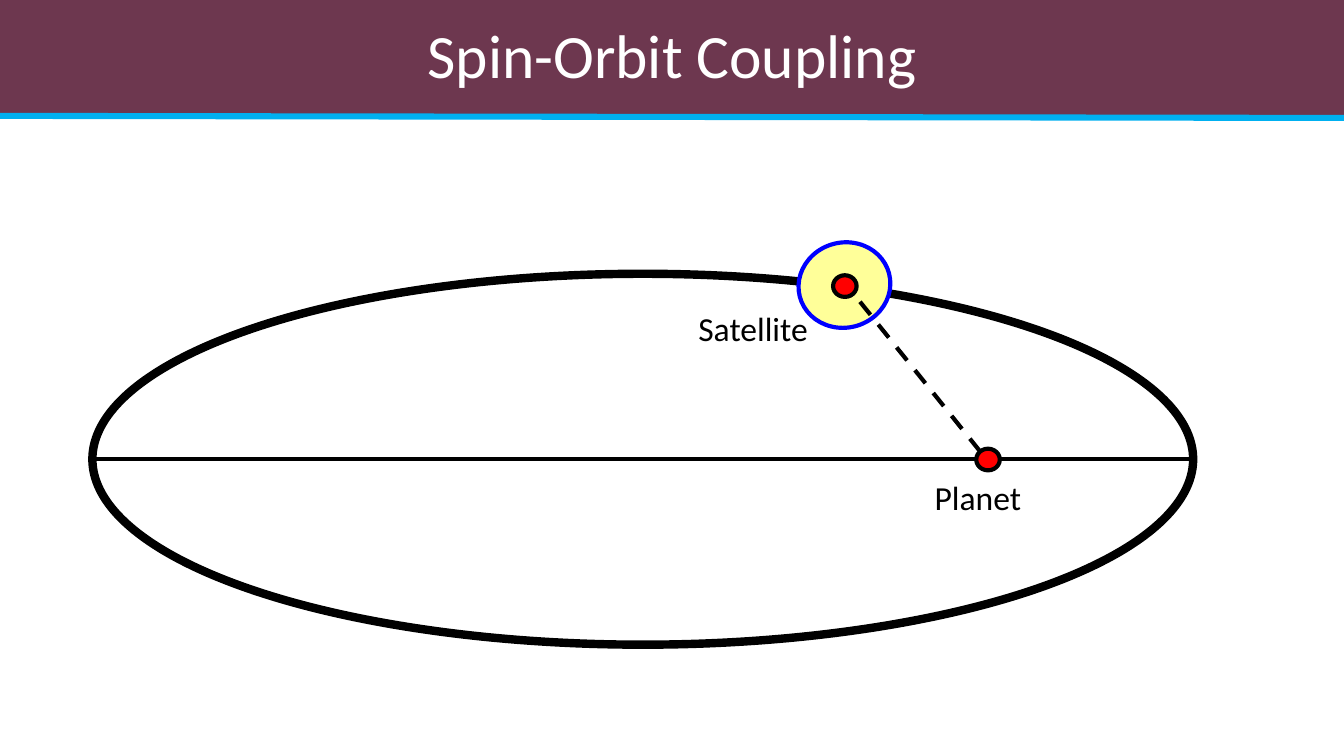
from typing import NamedTuple, Optional
from lxml.etree import SubElement as Sub
from pptx import Presentation
from pptx.dml.color import RGBColor as Rgb
from pptx.enum.dml import MSO_LINE as Dash
from pptx.enum.shapes import MSO_CONNECTOR as Conn, MSO_SHAPE as Kind
from pptx.enum.text import MSO_ANCHOR as Anchor, MSO_AUTO_SIZE as Auto, PP_ALIGN as Align
from pptx.oxml.ns import qn
from pptx.util import Pt

HUES = {
    "band": "460220",
    "rule": "00B0F0",
    "ink": "000000",
    "paper": "FFFFFF",
    "moon": "FFFF99",
    "rim": "0000FF",
    "core": "FF0000",
}
FONT = "Calibri"


class Oval(NamedTuple):
    left: float
    top: float
    width: float
    height: float
    fill: Optional[str]
    line: str
    weight: float
    turn: float = 0


class Line(NamedTuple):
    x1: float
    y1: float
    x2: float
    y2: float
    hue: str
    weight: float
    dash: bool = False


class Label(NamedTuple):
    text: str
    left: float
    top: float
    width: float


def tint(name: str) -> Rgb:
    return Rgb.from_string(HUES[name])


def write(para, text: str, size: float, hue: str) -> None:
    run = para.add_run()
    run.text = text
    run.font.name = FONT
    run.font.size = Pt(size)
    run.font.color.rgb = tint(hue)


def draw_oval(slide, oval: Oval) -> None:
    box = map(Pt, oval[:4])
    shape = slide.shapes.add_shape(Kind.OVAL, *box)
    shape.shadow.inherit = False
    shape.rotation = oval.turn
    if oval.fill:
        shape.fill.solid()
        shape.fill.fore_color.rgb = tint(oval.fill)
    else:
        shape.fill.background()
    shape.line.color.rgb = tint(oval.line)
    shape.line.width = Pt(oval.weight)


def draw_line(slide, line: Line) -> None:
    ends = map(Pt, line[:4])
    shape = slide.shapes.add_connector(Conn.STRAIGHT, *ends)
    shape.line.color.rgb = tint(line.hue)
    shape.line.width = Pt(line.weight)
    if line.dash:
        shape.line.dash_style = Dash.DASH
    Sub(shape._element.spPr, qn("a:effectLst"))


def draw_label(slide, label: Label) -> None:
    box = slide.shapes.add_textbox(Pt(label.left), Pt(label.top), Pt(label.width), Pt(29))
    frame = box.text_frame
    frame.word_wrap = False
    frame.auto_size = Auto.SHAPE_TO_FIT_TEXT
    write(frame.paragraphs[0], label.text, 18, "ink")


def draw_head(slide, text: str) -> None:
    band = slide.shapes.add_shape(Kind.RECTANGLE, Pt(-0.5), 0, Pt(720.5), Pt(62))
    band.shadow.inherit = False
    band.fill.solid()
    band.fill.fore_color.rgb = tint("band")
    band.line.fill.background()
    hue = band._element.spPr.find(qn("a:solidFill"))[0]
    Sub(hue, qn("a:alpha"), val="79000")
    draw_line(slide, Line(0, 62.1, 720.5, 63.2, "rule", 3.25))

    title = slide.shapes.title
    title.left, title.top, title.width, title.height = map(Pt, (0, 2, 720, 58.5))
    frame = title.text_frame
    frame.auto_size = Auto.NONE
    frame.vertical_anchor = Anchor.MIDDLE
    para = frame.paragraphs[0]
    para.alignment = Align.CENTER
    para.line_spacing = 0.9
    write(para, text, 33, "paper")
    slide.shapes._spTree.append(title._element)


def dot(x: float, y: float) -> Oval:
    wide, high = 12.6, 11.6
    return Oval(x - wide / 2, y - high / 2, wide, high, "core", "ink", 2.25)


PARTS = [
    Oval(49.5, 146.7, 589.7, 198.7, None, "ink", 4.5),
    Oval(429.6, 128, 45.6, 49.4, "moon", "rim", 2.25, 255.7),
    Line(639.2, 246, 49.5, 246, "ink", 2.25),
    Line(525.2, 242, 453.6, 152.8, "ink", 2.25, True),
    dot(529.3, 246.2),
    dot(452.6, 153.3),
    Label("Planet", 493.6, 252.2, 61),
    Label("Satellite", 367, 161.6, 74),
]
PENS = {Oval: draw_oval, Line: draw_line, Label: draw_label}


def main() -> None:
    deck = Presentation()
    deck.slide_width, deck.slide_height = Pt(720), Pt(405)
    slide = deck.slides.add_slide(deck.slide_layouts[5])
    draw_head(slide, "Spin-Orbit Coupling")
    for part in PARTS:
        PENS[type(part)](slide, part)
    deck.save("out.pptx")


if __name__ == "__main__":
    main()
